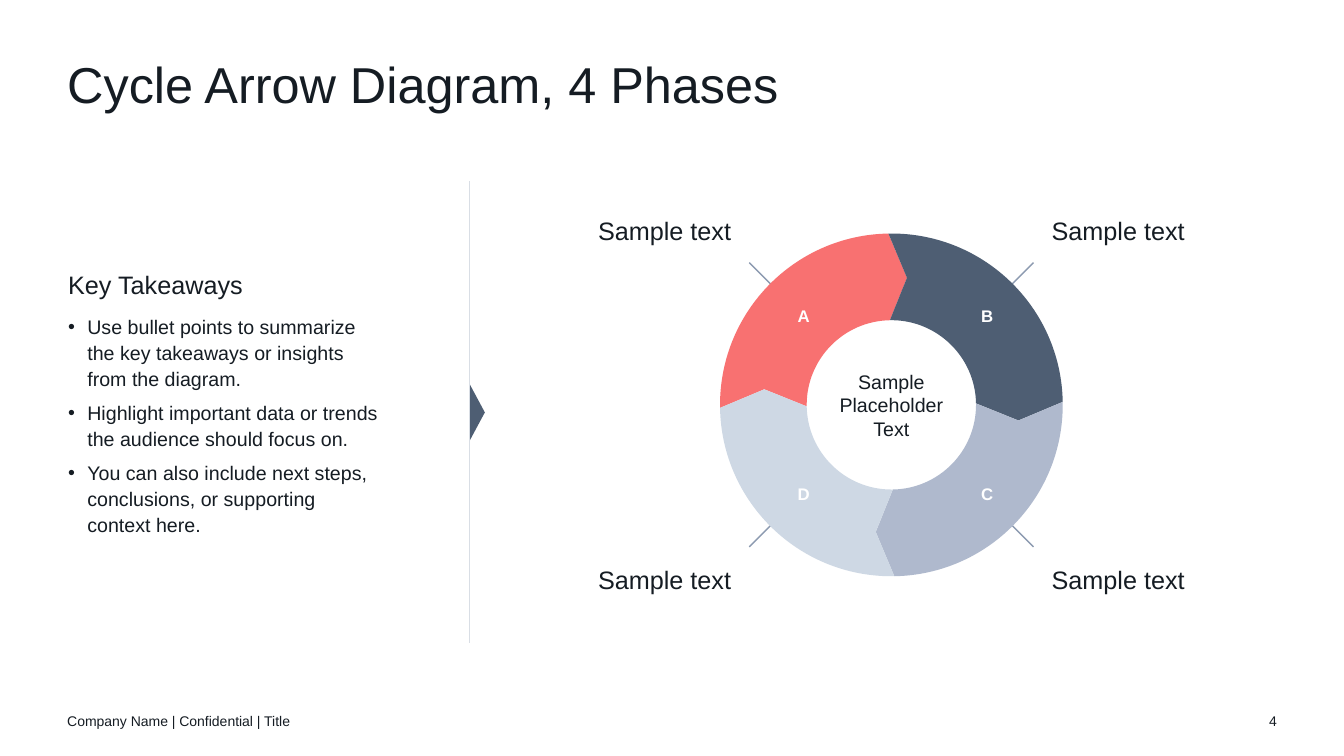
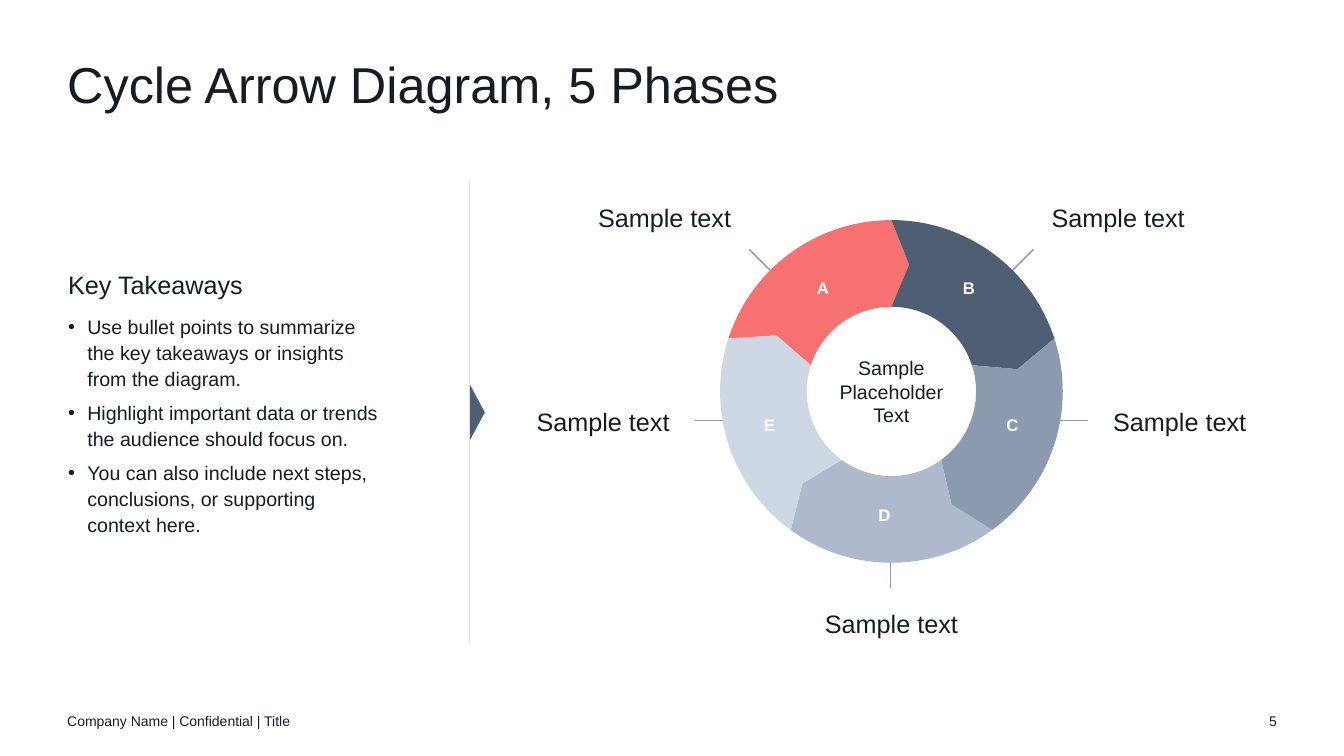
import math
from dataclasses import dataclass

from lxml import etree
from pptx import Presentation
from pptx.dml.color import RGBColor
from pptx.enum.shapes import MSO_CONNECTOR, MSO_SHAPE
from pptx.enum.text import MSO_ANCHOR, PP_ALIGN
from pptx.oxml.ns import qn
from pptx.util import Inches, Pt

LEFT, CENTER, RIGHT = PP_ALIGN.LEFT, PP_ALIGN.CENTER, PP_ALIGN.RIGHT
TOP, MIDDLE, BOTTOM = MSO_ANCHOR.TOP, MSO_ANCHOR.MIDDLE, MSO_ANCHOR.BOTTOM
STRAIGHT = MSO_CONNECTOR.STRAIGHT
TRIANGLE = MSO_SHAPE.ISOSCELES_TRIANGLE

WIDTH, HEIGHT = Inches(13.33), Inches(7.5)
COLS, ROWS = 80, 45
MARGIN = 4
CONTENT_W = COLS - 2 * MARGIN
DIVIDER_X = 27.96
RING_X = 53.06
R_OUTER, R_TIP, R_INNER = 10.2, 7.62, 5.04
TIP_TURN = 8
LABEL_W, LABEL_H, LETTER = 11.1, 1.8, 1.8


@dataclass(frozen=True)
class Theme:
    font: str = "Arial"
    ink: str = "151C23"
    white: str = "FFFFFF"
    coral: str = "F87171"
    slate: str = "4E5E73"
    steel: str = "8C9AB0"
    mist: str = "AFB9CD"
    ice: str = "CED8E4"
    rule: str = "D9DEE5"
    title: int = 36
    heading: int = 18
    body: int = 14
    letter: int = 12
    footer: int = 10


@dataclass(frozen=True)
class Callout:
    near: tuple
    far: tuple
    label: tuple
    align: int
    anchor: int


@dataclass(frozen=True)
class Cycle:
    title: str
    number: int
    center_y: float
    start: float
    colors: tuple
    letters: tuple
    callouts: tuple


T = Theme()
TAKEAWAYS = (
    "Use bullet points to summarize the key takeaways or insights from the diagram.",
    "Highlight important data or trends the audience should focus on.",
    "You can also include next steps, conclusions, or supporting context here.",
)


def col(n):
    return round(WIDTH * n / COLS)


def row(n):
    return round(HEIGHT * n / ROWS)


def polar(cy, radius, angle):
    a = math.radians(angle)
    return col(RING_X + radius * math.sin(a)), row(cy - radius * math.cos(a))


def side(sx):
    return LEFT if sx > 0 else RIGHT


def corner(sx, sy):
    return Callout((5.64 * sx, 5.64 * sy), (8.46 * sx, 8.46 * sy),
                   (9.54 * sx, 9.48 * sy), side(sx), TOP if sy > 0 else BOTTOM)


def flank(sx):
    return Callout((7.5 * sx, 1.74), (11.7 * sx, 1.74), (13.2 * sx, 1.8),
                   side(sx), MIDDLE)


def below():
    return Callout((-0.04, 8.8), (-0.04, 11.7), (0, 12.93), CENTER, TOP)


def fill(sp, color):
    sp.shadow.inherit = False
    sp.fill.solid()
    sp.fill.fore_color.rgb = RGBColor.from_string(color)
    sp.line.fill.background()


def add_frame(s, x, y, w, h, anchor=TOP):
    tf = s.shapes.add_textbox(col(x), row(y), col(w), row(h)).text_frame
    tf.word_wrap = True
    tf.vertical_anchor = anchor
    tf.margin_left = tf.margin_right = tf.margin_top = tf.margin_bottom = 0
    return tf


def add_para(tf, text, size=T.body, color=T.ink, bold=False, align=LEFT,
             spacing=None, before=None, after=None, bullet=None):
    p = tf.paragraphs[0]
    if p.runs:
        p = tf.add_paragraph()
    p.alignment = align
    p.line_spacing = spacing
    p.space_before = None if before is None else Pt(before)
    p.space_after = None if after is None else Pt(after)
    if bullet:
        pr = p._p.get_or_add_pPr()
        pr.set("marL", str(Inches(0.19)))
        pr.set("indent", str(-Inches(0.19)))
        etree.SubElement(pr, qn("a:buFont")).set("typeface", T.font)
        etree.SubElement(pr, qn("a:buChar")).set("char", bullet)
    r = p.add_run()
    r.text = text
    r.font.name = T.font
    r.font.size = Pt(size)
    r.font.bold = bold
    r.font.color.rgb = RGBColor.from_string(color)


def add_line(s, start, end, color):
    sp = s.shapes.add_connector(STRAIGHT, col(start[0]), row(start[1]),
                                col(end[0]), row(end[1]))
    sp.line.color.rgb = RGBColor.from_string(color)
    sp.line.width = Pt(1)
    etree.SubElement(sp._element.spPr, qn("a:effectLst"))


def curve(sp, line, cy, radius, a, b):
    stretch = 4 / 3 * math.tan(math.radians(b - a) / 4)
    reach = radius * math.hypot(1, stretch)
    swing = math.degrees(math.atan(stretch))
    bezier = etree.Element(qn("a:cubicBezTo"))
    for x, y in (polar(cy, reach, a + swing), polar(cy, reach, b - swing),
                 polar(cy, radius, b)):
        pt = etree.SubElement(bezier, qn("a:pt"))
        pt.set("x", str(x - sp.left))
        pt.set("y", str(y - sp.top))
    line.getparent().replace(line, bezier)


def add_segment(s, cy, start, end, color):
    axes = [a for a in range(-90, 361, 90) if start < a < end]
    angles = [start, *axes, end]
    stops = [(R_OUTER, a) for a in angles]
    stops.append((R_TIP, end + TIP_TURN))
    stops += [(R_INNER, a) for a in reversed(angles)]
    stops.append((R_TIP, start + TIP_TURN))
    points = [polar(cy, r, a) for r, a in stops]
    builder = s.shapes.build_freeform(*points[0], scale=1.0)
    builder.add_line_segments(points[1:], close=True)
    sp = builder.convert_to_shape()
    lines = list(sp._element.iter(qn("a:lnTo")))
    for line, (r0, a), (r1, b) in zip(lines, stops, stops[1:]):
        if r0 == r1:
            curve(sp, line, cy, r0, a, b)
    fill(sp, color)


def add_label(s, cy, callout):
    x, y = RING_X + callout.label[0], cy + callout.label[1]
    x -= {LEFT: 0, CENTER: LABEL_W / 2, RIGHT: LABEL_W}[callout.align]
    y -= {TOP: 0, MIDDLE: LABEL_H / 2, BOTTOM: LABEL_H}[callout.anchor]
    tf = add_frame(s, x, y, LABEL_W, LABEL_H, callout.anchor)
    add_para(tf, "Sample text", size=T.heading, align=callout.align)


def add_ring(s, cycle):
    cy = cycle.center_y
    for c in cycle.callouts:
        add_line(s, (RING_X + c.near[0], cy + c.near[1]),
                 (RING_X + c.far[0], cy + c.far[1]), T.steel)
    step = 360 / len(cycle.colors)
    for i, color in enumerate(cycle.colors):
        start = cycle.start + i * step
        add_segment(s, cy, start, start + step, color)
    for letter, (dx, dy) in zip("ABCDE", cycle.letters):
        tf = add_frame(s, RING_X + dx - LETTER / 2, cy + dy - LETTER / 2,
                       LETTER, LETTER, MIDDLE)
        add_para(tf, letter, size=T.letter, color=T.white, bold=True, align=CENTER)
    for c in cycle.callouts:
        add_label(s, cy, c)
    tf = add_frame(s, RING_X - 3.6, cy - 3.6, 7.2, 7.2, MIDDLE)
    add_para(tf, "Sample Placeholder Text", align=CENTER)


def add_takeaways(s):
    tf = add_frame(s, 4.06, 12.3, 18.6, 23.2, MIDDLE)
    add_para(tf, "Key Takeaways", size=T.heading, spacing=1.1, before=6, after=3)
    for text in TAKEAWAYS:
        add_para(tf, text, spacing=1.1, before=6, bullet="•")


def add_divider(s):
    w, h = 3.36, 0.9
    sp = s.shapes.add_shape(TRIANGLE, col(DIVIDER_X + h / 2 - w / 2), row(24.1),
                            col(w), row(h))
    sp.rotation = 90
    fill(sp, T.slate)
    add_line(s, (DIVIDER_X, 10.8), (DIVIDER_X, 38.28), T.rule)


def add_chrome(s, title, number):
    add_para(add_frame(s, MARGIN, 3.6, CONTENT_W, 3.6), title,
             size=T.title, spacing=0.9)
    add_para(add_frame(s, MARGIN, 41.7, 27, 2.4, MIDDLE),
             "Company Name | Confidential | Title", size=T.footer)
    add_para(add_frame(s, COLS - MARGIN - 3, 41.7, 3, 2.4, MIDDLE),
             str(number), size=T.footer, align=RIGHT)


def main():
    cycles = (
        Cycle("Cycle Arrow Diagram, 4 Phases", 4, 24.1, -91,
              (T.coral, T.slate, T.mist, T.ice),
              ((-5.22, -5.31), (5.7, -5.31), (5.7, 5.31), (-5.22, 5.31)),
              (corner(-1, -1), corner(1, -1), corner(1, 1), corner(-1, 1))),
        Cycle("Cycle Arrow Diagram, 5 Phases", 5, 23.3, -72,
              (T.coral, T.slate, T.steel, T.mist, T.ice),
              ((-4.08, -6.18), (4.62, -6.18), (7.2, 1.98),
               (-0.42, 7.32), (-7.26, 1.98)),
              (corner(-1, -1), corner(1, -1), flank(1), below(), flank(-1))),
    )
    prs = Presentation()
    prs.slide_width, prs.slide_height = WIDTH, HEIGHT
    for cycle in cycles:
        s = prs.slides.add_slide(prs.slide_layouts[6])
        add_chrome(s, cycle.title, cycle.number)
        add_takeaways(s)
        add_divider(s)
        add_ring(s, cycle)
    prs.save("out.pptx")


if __name__ == "__main__":
    main()
